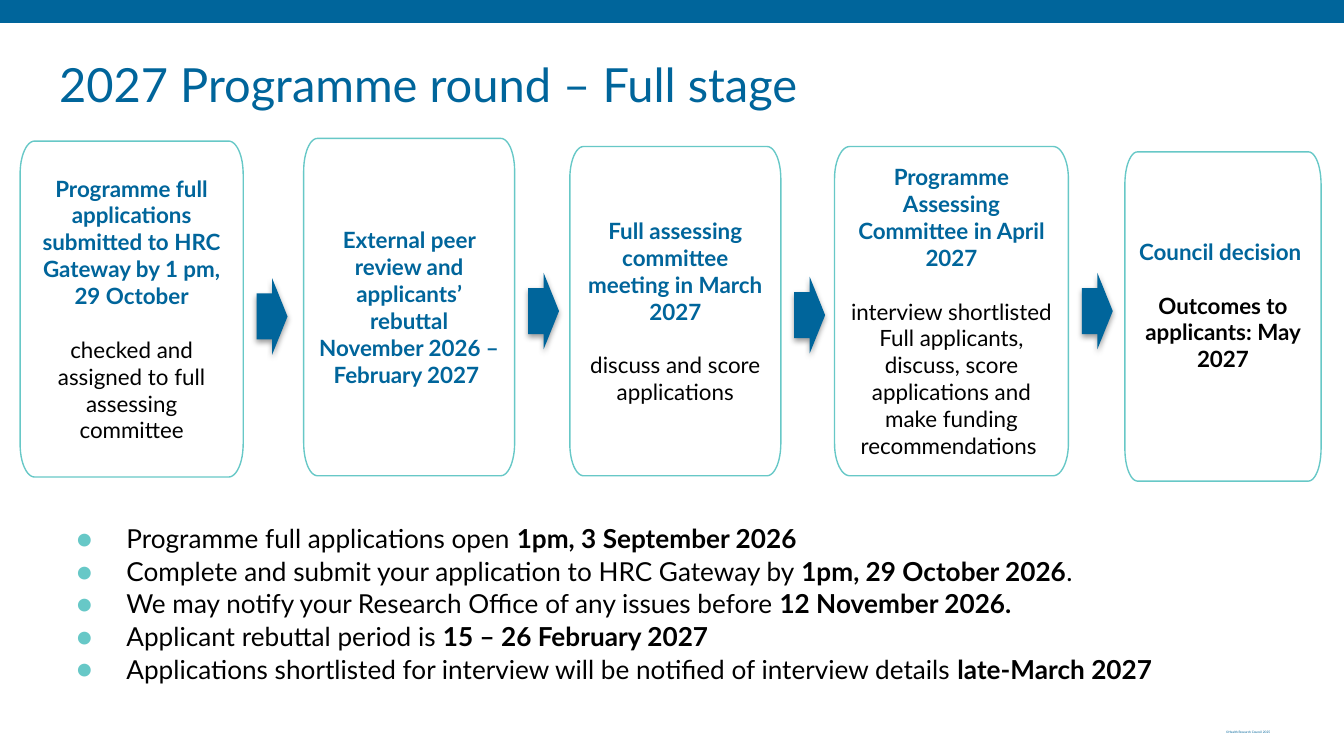
import math
from lxml import etree
from pptx import Presentation, util as u
from pptx.dml.color import RGBColor
from pptx.enum import shapes, text
from pptx.oxml.ns import qn

HUE = {"blue": "00659B", "teal": "67C8C7", "black": "000000", "white": "FFFFFF"}
FACE = "Lato"

# Content
TITLE = "2027 Programme round – Full stage"
OWNER = "©Health Research Council 2025"
HEAD = {"bold": True, "hue": "blue"}
BODY = {"bold": False, "hue": "black"}
DONE = {"bold": True, "hue": "black"}
GAP = 14.4  # points between the two parts of a card

# Cards: box, bottom inset, paragraphs (text, format, space before)
CARDS = [
    ((0.15, 1.05, 1.66, 2.5), 0.09, [
        ("Programme full applications submitted to HRC Gateway by 1 pm, 29 October", HEAD, 0),
        ("checked and assigned to full assessing committee", BODY, GAP)]),
    ((2.26, 1.03, 1.57, 2.51), 0.09, [
        ("External peer review and applicants’ rebuttal", HEAD, 0),
        ("November 2026 – February 2027 ", HEAD, 0)]),
    ((4.24, 1.09, 1.57, 2.45), 0.09, [
        ("Full assessing committee meeting in March 2027", HEAD, 0),
        ("discuss and score applications", BODY, GAP)]),
    ((6.21, 1.09, 1.74, 2.45), 0.09, [
        ("Programme Assessing Committee in April 2027", HEAD, 0),
        ("interview shortlisted Full applicants, discuss, score applications "
         "and make funding recommendations ", BODY, GAP)]),
    ((8.37, 1.13, 1.46, 2.45), 0.26, [
        ("Council decision ", HEAD, 0),
        ("Outcomes to applicants: May 2027", DONE, GAP)]),
]
ARROWS = [(1.91, 2.07), (3.93, 2.03), (5.91, 2.06), (8.05, 2.03)]

# Key dates: plain, bold, plain
DATES = [
    ("Programme full applications open ", "1pm, 3 September 2026", ""),
    ("Complete and submit your application to HRC Gateway by ", "1pm, 29 October 2026", "."),
    ("We may notify your Research Office of any issues before ", "12 November 2026.", ""),
    ("Applicant rebuttal period is ", "15 – 26 February 2027", ""),
    ("Applications shortlisted for interview will be notified of interview details ",
     "late-March 2027", ""),
]


def rgb(hue):
    return RGBColor.from_string(HUE[hue])


def apply(obj, **vals):
    for key, val in vals.items():
        setattr(obj, key, val)


def place(shape, box):
    apply(shape, **dict(zip(("left", "top", "width", "height"), map(u.Inches, box))))


def frame(shape, pad, anchor, **more):
    tf = shape.text_frame
    vals = {"margin_" + side: u.Inches(pad) for side in ("left", "top", "right", "bottom")}
    vals |= {"word_wrap": True, "auto_size": text.MSO_AUTO_SIZE.NONE,
             "vertical_anchor": anchor}
    apply(tf, **(vals | more))
    return tf


def write(para, words, size, hue, bold=False):
    run = para.add_run()
    run.text = words
    apply(run.font, name=FACE, size=u.Pt(size), bold=bold)
    run.font.color.rgb = rgb(hue)
    return run


def node(root, tag, **vals):
    return etree.SubElement(root, qn(tag), {k: str(v) for k, v in vals.items()})


def paint(shape, fill, line=None):
    shape.shadow.inherit = False
    shape.fill.solid()
    shape.fill.fore_color.rgb = rgb(fill)
    if line:
        shape.line.color.rgb = rgb(line)
        shape.line.width = u.Pt(0.75)
    else:
        shape.line.fill.background()


def card(box):
    """Box with tall elliptical corners."""
    x, y, w, h = box
    rx, ry = 0.065 * w, 0.098 * h
    mids = [(x + w - rx, y + h - ry), (x + rx, y + h - ry),
            (x + rx, y + ry), (x + w - rx, y + ry)]
    steps = 12
    pts = []
    for turn, (cx, cy) in enumerate(mids):
        for step in range(steps + 1):
            ang = math.pi / 2 * (turn + step / steps)
            pts.append((u.Inches(cx + rx * math.cos(ang)),
                        u.Inches(cy + ry * math.sin(ang))))
    pen = slide.shapes.build_freeform(*pts[0])
    pen.add_line_segments(pts[1:], close=True)
    return pen.convert_to_shape()


# Widescreen slide, 16 to 9
deck = Presentation()
wide = u.Inches(10)
apply(deck, slide_width=wide, slide_height=wide * 9 // 16)
slide = deck.slides.add_slide(deck.slide_layouts[1])
TOP, MID = text.MSO_ANCHOR.TOP, text.MSO_ANCHOR.MIDDLE
ALIGN = text.PP_ALIGN

# Top band and copyright line
band = slide.shapes.add_shape(shapes.MSO_SHAPE.RECTANGLE, 0, 0, 0, 0)
place(band, (-0.03, -0.01, 10.04, 0.18))
paint(band, "blue")
note = slide.shapes.add_textbox(0, 0, 0, 0)
place(note, (7.28, 5.31, 2.27, 0.25))
para = frame(note, 0.1, MID).paragraphs[0]
para.alignment = ALIGN.RIGHT
write(para, OWNER, 3, "blue").font._element.set("baseline", "-25000")

# Title
title = slide.shapes.title
place(title, (0.34, 0.31, 9.32, 0.63))
para = frame(title, 0.1, TOP).paragraphs[0]
para.alignment = ALIGN.LEFT
write(para, TITLE, 25.2, "blue")

# Key dates
body = slide.placeholders[1]
place(body, (0.34, 3.78, 9.32, 1.49))
tf = frame(body, 0.1, TOP)
for i, parts in enumerate(DATES):
    para = tf.add_paragraph() if i else tf.paragraphs[0]
    ppr = para._p.get_or_add_pPr()
    ppr.set("marL", str(u.Inches(0.5)))
    ppr.set("indent", str(u.Inches(-0.37)))
    node(node(ppr, "a:buClr"), "a:srgbClr", val=HUE["teal"])
    node(ppr, "a:buFont", typeface=FACE)
    node(ppr, "a:buChar", char="●")
    apply(para, line_spacing=1.04, space_before=u.Pt(0), space_after=u.Pt(0))
    for j, words in enumerate(parts):
        if words:
            write(para, words, 14, "black", j == 1)

# Cards
for box, base, paras in CARDS:
    shape = card(box)
    paint(shape, "white", "teal")
    tf = frame(shape, 0.09, MID, margin_bottom=u.Inches(base))
    for i, (words, look, gap) in enumerate(paras):
        para = tf.add_paragraph() if i else tf.paragraphs[0]
        para.alignment = ALIGN.CENTER
        if gap:
            para.space_before = u.Pt(gap)
        write(para, words, 12, **look)

# Arrows between cards, with a soft shadow below
for x, y in ARROWS:
    arrow = slide.shapes.add_shape(shapes.MSO_SHAPE.RIGHT_ARROW, 0, 0, 0, 0)
    place(arrow, (x, y, 0.23, 0.57))
    arrow.adjustments[0], arrow.adjustments[1] = 0.6, 0.5
    paint(arrow, "blue")
    glow = node(arrow._element.spPr.find(qn("a:effectLst")), "a:outerShdw",
                blurRad=u.Pt(3.1), dist=u.Pt(1.6), dir=5400000, rotWithShape=0)
    node(node(glow, "a:srgbClr", val=HUE["black"]), "a:alpha", val=38000)

deck.save("out.pptx")
